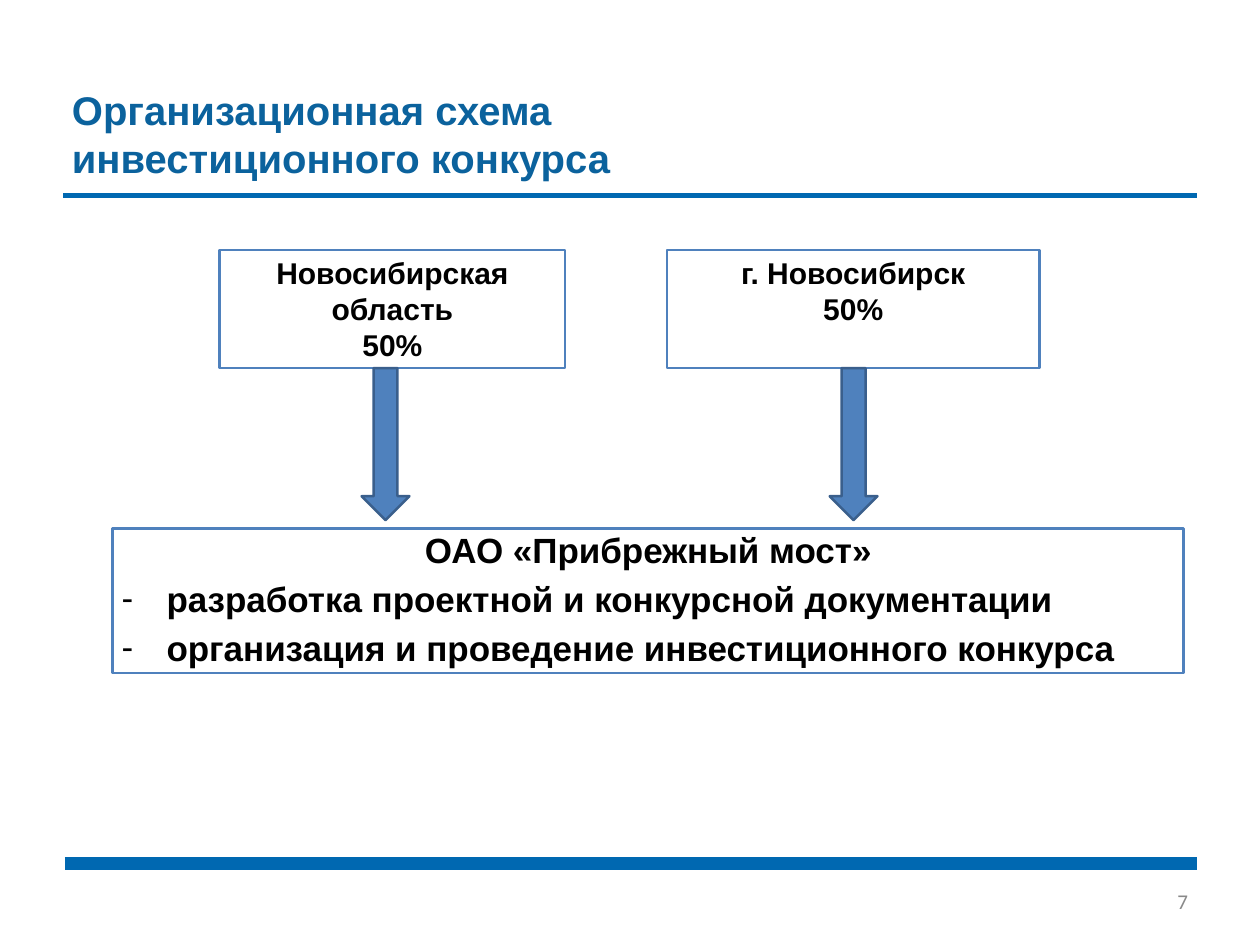
from lxml import etree
from pptx import Presentation
from pptx.dml.color import RGBColor
from pptx.enum.shapes import MSO_CONNECTOR, MSO_SHAPE
from pptx.enum.text import MSO_ANCHOR as Anchor, PP_ALIGN as Align
from pptx.oxml.ns import qn
from pptx.util import Cm, Pt

BLUE, FILL, EDGE, ARROW_EDGE = "0068B1", "4F81BD", "4F81BD", "3A5F8C"
TITLE = "Организационная схема\vинвестиционного конкурса"
PAGE_NUMBER = "7"

# Lengths in cm: (left, width, arrow centre, lines)
FOUNDERS = [
    (6.2, 9.75, 10.88, ["Новосибирская область", "50%"]),
    (18.82, 10.52, 24.09, ["г. Новосибирск", "50%"]),
]
FOUNDER_TOP, FOUNDER_HEIGHT = 7.06, 3.33
ARROW_LENGTH, ARROW_WIDTH = 4.29, 1.35

COMPANY = "ОАО «Прибрежный мост»"
TASKS = [
    "разработка проектной и конкурсной документации",
    "организация и проведение инвестиционного конкурса",
]
COMPANY_AREA = (3.18, 14.91, 30.23, 4.09)

# (left, right, y, line width in points)
RULES = [(1.83, 33.78, 24.38, 10.5), (1.78, 33.78, 5.51, 4)]


def color(value):
    return RGBColor.from_string(value)


def write(box, lines, size, ink="000000", bold=True, font="Arial",
          align=Align.LEFT, anchor=Anchor.TOP):
    frame = box.text_frame
    frame.word_wrap = True
    frame.vertical_anchor = anchor
    frame.text = "\n".join(lines)
    for para in frame.paragraphs:
        para.alignment = align
        for span in para.runs:
            span.font.size = Pt(size)
            span.font.name = font
            span.font.bold = bold
            span.font.color.rgb = color(ink)


def add_shape(page, kind, area, edge, fill=None):
    shape = page.shapes.add_shape(kind, *map(Cm, area))
    shape.shadow.inherit = False
    if fill:
        shape.fill.solid()
        shape.fill.fore_color.rgb = color(fill)
    else:
        shape.fill.background()
    shape.line.color.rgb = color(edge)
    shape.line.width = Pt(2)
    return shape


def add_rule(page, left, right, y, width):
    rule = page.shapes.add_connector(
        MSO_CONNECTOR.STRAIGHT, Cm(left), Cm(y), Cm(right), Cm(y))
    rule.line.color.rgb = color(BLUE)
    rule.line.width = Pt(width)
    etree.SubElement(rule._element.spPr, qn("a:effectLst"))


def add_dash(para):
    """Turn a paragraph into a dashed list item with a hanging indent."""
    props = para._p.get_or_add_pPr()
    props.set("marL", str(Cm(1.27)))
    props.set("indent", str(-Cm(1.27)))
    etree.SubElement(props, qn("a:buFont"), typeface="Arial")
    etree.SubElement(props, qn("a:buChar"), char="-")
    para.space_before = Pt(5.6)


def main():
    deck = Presentation()
    deck.slide_width, deck.slide_height = Cm(35.56), Cm(26.67)
    page = deck.slides.add_slide(deck.slide_layouts[6])

    for rule in RULES:
        add_rule(page, *rule)

    title = page.shapes.add_textbox(Cm(1.78), Cm(2.29), Cm(22.73), Cm(3.1))
    write(title, [TITLE], 32, ink="0B629D")
    number = page.shapes.add_textbox(Cm(24.51), Cm(24.71), Cm(9.27), Cm(1.42))
    write(number, [PAGE_NUMBER], 16.8, ink="898989", bold=False,
          font="Calibri", align=Align.RIGHT, anchor=Anchor.MIDDLE)

    arrow_middle = FOUNDER_TOP + FOUNDER_HEIGHT + ARROW_LENGTH / 2
    for left, width, centre, lines in FOUNDERS:
        founder = add_shape(page, MSO_SHAPE.RECTANGLE,
                            (left, FOUNDER_TOP, width, FOUNDER_HEIGHT), EDGE)
        write(founder, lines, 24, align=Align.CENTER)
        arrow = add_shape(
            page, MSO_SHAPE.RIGHT_ARROW,
            (centre - ARROW_LENGTH / 2, arrow_middle - ARROW_WIDTH / 2,
             ARROW_LENGTH, ARROW_WIDTH), ARROW_EDGE, FILL)
        arrow.rotation = 90

    company = add_shape(page, MSO_SHAPE.RECTANGLE, COMPANY_AREA, EDGE)
    write(company, [COMPANY, *TASKS], 28, anchor=Anchor.BOTTOM)
    heading, *items = company.text_frame.paragraphs
    heading.alignment = Align.CENTER
    for item in items:
        add_dash(item)

    deck.save("out.pptx")


if __name__ == "__main__":
    main()
